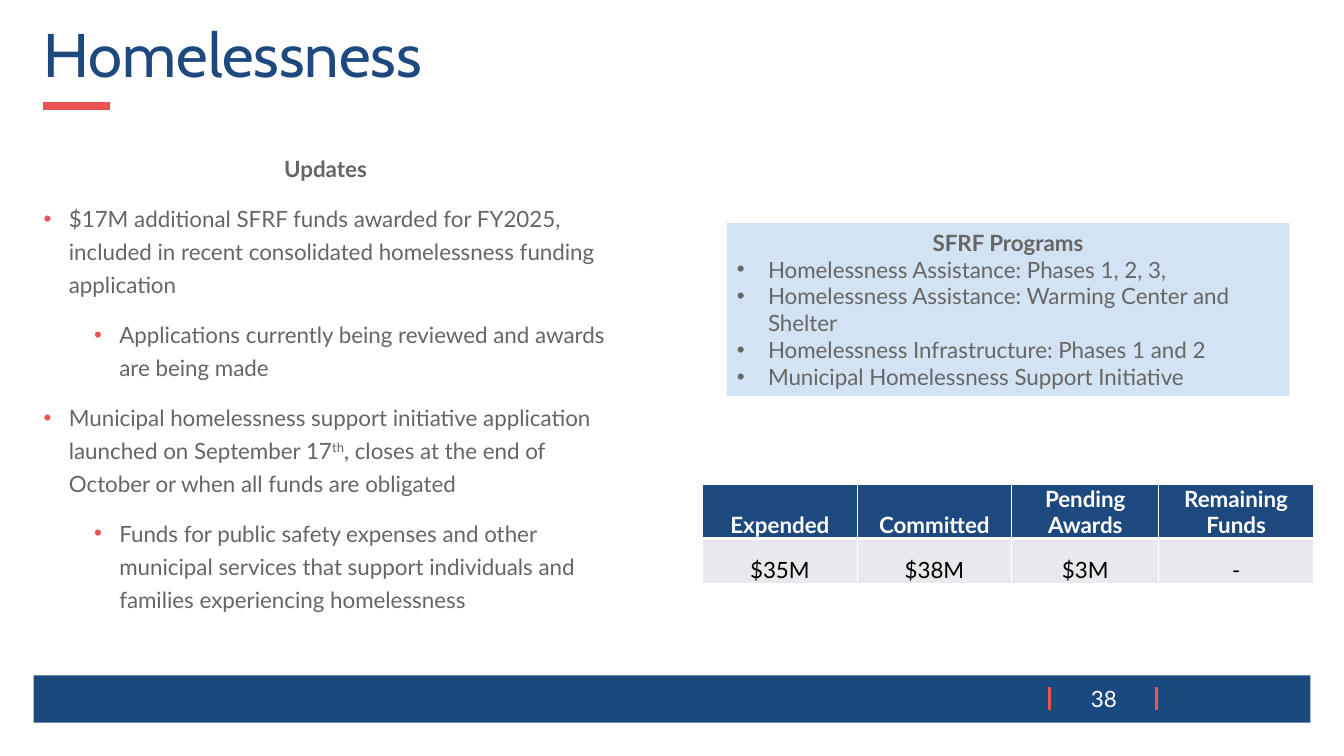
from dataclasses import dataclass

from lxml.etree import SubElement
from pptx import Presentation
from pptx.dml.color import RGBColor
from pptx.enum.shapes import MSO_CONNECTOR, MSO_SHAPE
from pptx.enum.text import MSO_ANCHOR, MSO_AUTO_SIZE, PP_ALIGN
from pptx.oxml.ns import qn
from pptx.util import Inches, Pt

SLIDE_WIDTH = Inches(13.333)
SLIDE_HEIGHT = Inches(7.5)


@dataclass(frozen=True)
class Theme:
    """Colours, fonts and type sizes of the slide."""

    title: str = "1E497F"
    footer: str = "1A497F"
    accent: str = "EC5153"
    bullet: str = "EB5152"
    text: str = "656565"
    panel_text: str = "656666"
    panel: str = "D2E3F4"
    value_fill: str = "E8E9EC"
    white: str = "FFFFFF"
    black: str = "000000"
    title_font: str = "Cabin"
    text_font: str = "Lato"
    title_size: int = 44
    text_size: int = 16


@dataclass(frozen=True)
class Box:
    """A place given in percent of the slide's width and height."""

    left: float
    top: float
    width: float
    height: float

    def lengths(self) -> tuple[int, int, int, int]:
        """Return left, top, width and height as slide lengths."""
        return across(self.left), down(self.top), across(self.width), down(self.height)


@dataclass(frozen=True)
class Rule:
    """A straight accent line in percent of the slide's size."""

    start: tuple[float, float]
    end: tuple[float, float]
    weight: float


@dataclass(frozen=True)
class Item:
    """A list entry, whose level is None when it is a heading."""

    text: str
    level: int | None = 0
    superscript: str = ""
    rest: str = ""


@dataclass(frozen=True)
class TableRow:
    """A table row with its look."""

    texts: tuple[str, ...]
    height: float
    fill: str
    color: str
    bold: bool
    bottom_border: float


THEME = Theme()
TITLE_BOX = Box(2.5, 2.53, 95, 10.27)
UPDATES_BOX = Box(2.5, 19.07, 43.44, 66.67)
PANEL_BOX = Box(54.08, 29.47, 41.85, 22.93)
TABLE_BOX = Box(52.28, 64.13, 45.45, 13.07)
FOOTER_BOX = Box(2.5, 89.33, 95, 6.27)
NUMBER_BOX = Box(79.73, 90, 4.8, 4.93)
RULES = (
    Rule((3.23, 14), (8.18, 14), 6),
    Rule((78.08, 90.93), (78.08, 93.87), 2.25),
    Rule((86.03, 90.93), (86.03, 93.87), 2.25),
)
UPDATES = (
    Item("Updates", None),
    Item("$17M additional SFRF funds awarded for FY2025, included in recent "
         "consolidated homelessness funding application"),
    Item("Applications currently being reviewed and awards are being made", 1),
    Item("Municipal homelessness support initiative application launched on September 17",
         0, "th", ", closes at the end of October or when all funds are obligated"),
    Item("Funds for public safety expenses and other municipal services that support "
         "individuals and families experiencing homelessness", 1),
)
PROGRAMS = (
    Item("SFRF Programs", None),
    Item("Homelessness Assistance: Phases 1, 2, 3,"),
    Item("Homelessness Assistance: Warming Center and Shelter"),
    Item("Homelessness Infrastructure: Phases 1 and 2"),
    Item("Municipal Homelessness Support Initiative"),
)
COLUMN_WIDTHS = (11.5, 11.5, 10.95, 11.5)
TABLE_ROWS = (
    TableRow(("Expended", "Committed", "Pending Awards", "Remaining Funds"),
             7.11, THEME.title, THEME.white, True, 3),
    TableRow(("$35M", "$38M", "$3M", "-"), 5.96, THEME.value_fill, THEME.black, False, 1),
)


def across(share: float) -> int:
    """Turn a percentage of the slide's width into a length."""
    return round(SLIDE_WIDTH * share / 100)


def down(share: float) -> int:
    """Turn a percentage of the slide's height into a length."""
    return round(SLIDE_HEIGHT * share / 100)


def place(shape, box: Box) -> None:
    """Move and size a shape to a box."""
    shape.left, shape.top, shape.width, shape.height = box.lengths()


def style(paragraph, color: str, alignment=PP_ALIGN.CENTER, bold: bool = False,
          name: str = THEME.text_font, size: int = THEME.text_size) -> None:
    """Set the alignment and font of a paragraph."""
    paragraph.alignment = alignment
    font = paragraph.font
    font.name, font.size, font.bold = name, Pt(size), bold
    font.color.rgb = RGBColor.from_string(color)


def set_bullet(paragraph, level: int | None, indent: float, color: str) -> None:
    """Give a paragraph a hanging bullet, or none for a heading."""
    properties = paragraph._p.get_or_add_pPr()
    hanging = 0 if level is None else Inches(indent)
    properties.set("marL", str(hanging + Inches(0.5) * (level or 0)))
    properties.set("indent", str(-hanging))
    if level is None:
        SubElement(properties, qn("a:buNone"))
        return
    bullet_color = SubElement(properties, qn("a:buClr"))
    SubElement(bullet_color, qn("a:srgbClr"), val=color)
    SubElement(properties, qn("a:buFont"), typeface="Arial")
    SubElement(properties, qn("a:buChar"), char="•")


def fill_list(frame, items: tuple[Item, ...], indent: float, color: str,
              bullet_color: str, line_spacing: float = 1, gap: float = 0) -> None:
    """Write a heading and its bulleted entries into a text frame."""
    frame.word_wrap = True
    for index, item in enumerate(items):
        paragraph = frame.add_paragraph() if index else frame.paragraphs[0]
        paragraph.level = item.level or 0
        set_bullet(paragraph, item.level, indent, bullet_color)
        paragraph.line_spacing = line_spacing
        paragraph.space_before = Pt(gap if index else 0)
        paragraph.space_after = Pt(gap)
        heading = item.level is None
        style(paragraph, color, PP_ALIGN.CENTER if heading else PP_ALIGN.LEFT, heading)
        paragraph.add_run().text = item.text
        if item.superscript:
            raised = paragraph.add_run()
            raised.text = item.superscript
            raised._r.get_or_add_rPr().set("baseline", "30000")
            paragraph.add_run().text = item.rest


def add_rectangle(slide, box: Box, color: str):
    """Add a plain filled rectangle."""
    shape = slide.shapes.add_shape(MSO_SHAPE.RECTANGLE, *box.lengths())
    shape.shadow.inherit = False
    shape.fill.solid()
    shape.fill.fore_color.rgb = RGBColor.from_string(color)
    shape.line.fill.background()
    return shape


def add_rule(slide, rule: Rule) -> None:
    """Add an accent line."""
    line = slide.shapes.add_connector(
        MSO_CONNECTOR.STRAIGHT, across(rule.start[0]), down(rule.start[1]),
        across(rule.end[0]), down(rule.end[1]))
    line.line.color.rgb = RGBColor.from_string(THEME.accent)
    line.line.width = Pt(rule.weight)
    SubElement(line._element.spPr, qn("a:effectLst"))


def format_cell(cell, text: str, row: TableRow) -> None:
    """Write a table cell with its borders and fill."""
    properties = cell._tc.get_or_add_tcPr()
    for side, weight in (("L", 1), ("R", 1), ("T", 1), ("B", row.bottom_border)):
        border = SubElement(properties, qn(f"a:ln{side}"), w=str(Pt(weight)))
        SubElement(SubElement(border, qn("a:solidFill")), qn("a:srgbClr"), val=THEME.white)
    cell.fill.solid()
    cell.fill.fore_color.rgb = RGBColor.from_string(row.fill)
    cell.margin_left = cell.margin_right = cell.margin_top = cell.margin_bottom = 0
    cell.vertical_anchor = MSO_ANCHOR.BOTTOM
    cell.text = text
    style(cell.text_frame.paragraphs[0], row.color, bold=row.bold)


def add_funds_table(slide) -> None:
    """Add the table of fund totals."""
    table = slide.shapes.add_table(
        len(TABLE_ROWS), len(COLUMN_WIDTHS), *TABLE_BOX.lengths()).table
    table.horz_banding = False
    for column, width in zip(table.columns, COLUMN_WIDTHS):
        column.width = across(width)
    for table_row, row in zip(table.rows, TABLE_ROWS):
        table_row.height = down(row.height)
        for cell, text in zip(table_row.cells, row.texts):
            format_cell(cell, text, row)


def main() -> None:
    """Build and save the slide."""
    presentation = Presentation()
    presentation.slide_width, presentation.slide_height = SLIDE_WIDTH, SLIDE_HEIGHT
    slide = presentation.slides.add_slide(presentation.slide_layouts[1])
    add_rectangle(slide, FOOTER_BOX, THEME.footer)
    for rule in RULES:
        add_rule(slide, rule)

    title, updates = slide.shapes.title, slide.placeholders[1]
    place(title, TITLE_BOX)
    title.text_frame.text = "Homelessness"
    title.text_frame.auto_size = MSO_AUTO_SIZE.NONE
    heading = title.text_frame.paragraphs[0]
    heading.line_spacing = 0.9
    style(heading, THEME.title, PP_ALIGN.LEFT, name=THEME.title_font, size=THEME.title_size)

    place(updates, UPDATES_BOX)
    updates.text_frame.auto_size = MSO_AUTO_SIZE.NONE
    fill_list(updates.text_frame, UPDATES, 0.25, THEME.text, THEME.bullet, 1.23, 6)
    panel = add_rectangle(slide, PANEL_BOX, THEME.panel)
    fill_list(panel.text_frame, PROGRAMS, 0.31, THEME.panel_text, THEME.panel_text)
    add_funds_table(slide)

    number = slide.shapes.add_textbox(*NUMBER_BOX.lengths()).text_frame
    number.word_wrap = True
    number.vertical_anchor = MSO_ANCHOR.MIDDLE
    number.text = "38"
    style(number.paragraphs[0], THEME.white)
    presentation.save("out.pptx")


if __name__ == "__main__":
    main()
